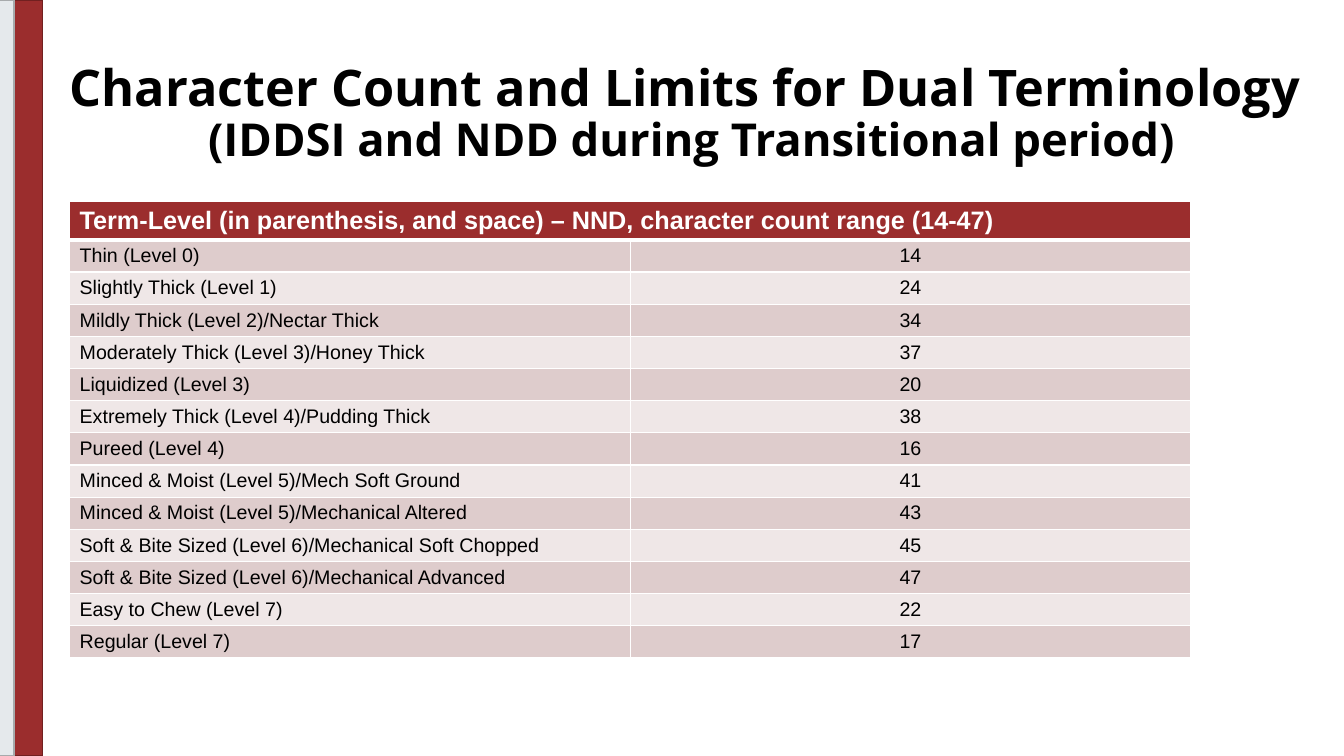
from typing import NamedTuple

from lxml.etree import SubElement
from pptx import Presentation
from pptx.dml.color import RGBColor
from pptx.enum.shapes import MSO_SHAPE
from pptx.enum.text import MSO_ANCHOR, PP_ALIGN
from pptx.oxml import parse_xml
from pptx.oxml.ns import nsdecls, qn
from pptx.util import Inches, Pt

BLACK = RGBColor(0x00, 0x00, 0x00)
WHITE = RGBColor(0xFF, 0xFF, 0xFF)
RED = RGBColor(0x9B, 0x2D, 0x2D)
DARK_RED = RGBColor(0x71, 0x20, 0x20)
PALE_GREY = RGBColor(0xE5, 0xE9, 0xEC)
MID_GREY = RGBColor(0xA7, 0xAA, 0xAC)
ROW_BANDS = (RGBColor(0xDE, 0xCC, 0xCC), RGBColor(0xEF, 0xE7, 0xE7))


class SideBar(NamedTuple):
    left: float
    width: float
    fill: RGBColor
    outline: RGBColor


class Term(NamedTuple):
    name: str
    count: int


SIDE_BARS = [
    SideBar(0, 0.42, RED, DARK_RED),
    SideBar(-0.03, 0.17, PALE_GREY, MID_GREY),
]
TITLE_LINES = (
    "Character Count and Limits for Dual Terminology ",
    "(IDDSI and NDD during Transitional period)",
)
TITLE_SIZES = (36, 32.4)
TABLE_HEADING = "Term-Level (in parenthesis, and space) – NND, character count range (14-47)"
TERMS = [
    Term("Thin (Level 0)", 14),
    Term("Slightly Thick (Level 1)", 24),
    Term("Mildly Thick (Level 2)/Nectar Thick", 34),
    Term("Moderately Thick (Level 3)/Honey Thick", 37),
    Term("Liquidized (Level 3)", 20),
    Term("Extremely Thick (Level 4)/Pudding Thick", 38),
    Term("Pureed (Level 4)", 16),
    Term("Minced & Moist (Level 5)/Mech Soft Ground", 41),
    Term("Minced & Moist (Level 5)/Mechanical Altered", 43),
    Term("Soft & Bite Sized (Level 6)/Mechanical Soft Chopped", 45),
    Term("Soft & Bite Sized (Level 6)/Mechanical Advanced", 47),
    Term("Easy to Chew (Level 7)", 22),
    Term("Regular (Level 7)", 17),
]
HEADING_HEIGHT, TERM_HEIGHT, COLUMN_WIDTH = 0.37, 0.31, 5.56


def draw_side_bar(slide, bar: SideBar) -> None:
    stripe = slide.shapes.add_shape(
        MSO_SHAPE.RECTANGLE, Inches(bar.left), 0, Inches(bar.width), Inches(7.5)
    )
    stripe.shadow.inherit = False
    stripe.fill.solid()
    stripe.fill.fore_color.rgb = bar.fill
    stripe.line.color.rgb = bar.outline
    stripe.line.width = Pt(1)


def write_title(slide) -> None:
    title = slide.shapes.title
    title.left, title.top = Inches(0.38), Inches(0.41)
    title.width, title.height = Inches(12.96), Inches(1.45)
    title.text_frame.vertical_anchor = MSO_ANCHOR.MIDDLE
    heading = title.text_frame.paragraphs[0]
    heading.text = "\v".join(TITLE_LINES)
    heading.alignment = PP_ALIGN.CENTER
    heading.line_spacing = 0.9
    for run, size in zip(heading.runs, TITLE_SIZES):
        run.font.name = "Open Sans"
        run.font.size = Pt(size)
        run.font.bold = True
        run.font.color.rgb = BLACK
    # The line break takes the size of the first line
    line_break = heading._p.find(qn("a:br"))
    SubElement(line_break, qn("a:rPr")).set("sz", str(TITLE_SIZES[0] * 100))


def set_borders(cell, top: float = 1, bottom: float = 1) -> None:
    properties = cell._tc.get_or_add_tcPr()
    widths = {"lnL": 1, "lnR": 1, "lnT": top, "lnB": bottom}
    for position, (side, width) in enumerate(widths.items()):
        border = parse_xml(
            f'<a:{side} {nsdecls("a")} w="{Pt(width)}"><a:solidFill>'
            f'<a:srgbClr val="{WHITE}"/></a:solidFill></a:{side}>'
        )
        properties.insert(position, border)


def fill_cell(cell, text: str, fill: RGBColor, color: RGBColor, size: float,
              bold: bool = False, align: PP_ALIGN = PP_ALIGN.LEFT) -> None:
    cell.fill.solid()
    cell.fill.fore_color.rgb = fill
    cell.text_frame.text = text
    paragraph = cell.text_frame.paragraphs[0]
    paragraph.alignment = align
    for run in paragraph.runs:
        run.font.name = "Arial"
        run.font.size = Pt(size)
        run.font.bold = bold
        run.font.color.rgb = color


def draw_term_table(slide) -> None:
    table_height = HEADING_HEIGHT + TERM_HEIGHT * len(TERMS)
    table = slide.shapes.add_table(
        len(TERMS) + 1, 2, Inches(0.69), Inches(2),
        Inches(2 * COLUMN_WIDTH), Inches(table_height),
    ).table
    for column in table.columns:
        column.width = Inches(COLUMN_WIDTH)
    for row in table.rows:
        row.height = Inches(TERM_HEIGHT)
    table.rows[0].height = Inches(HEADING_HEIGHT)

    # Heading across both columns
    table.cell(0, 0).merge(table.cell(0, 1))
    fill_cell(table.cell(0, 0), TABLE_HEADING, RED, WHITE, 18, bold=True)
    for cell in table.rows[0].cells:
        set_borders(cell, bottom=3)

    # One banded row per term
    for number, term in enumerate(TERMS, start=1):
        name_cell, count_cell = table.rows[number].cells
        band = ROW_BANDS[(number - 1) % 2]
        fill_cell(name_cell, term.name, band, BLACK, 14)
        fill_cell(count_cell, str(term.count), band, BLACK, 14, align=PP_ALIGN.CENTER)
        for cell in (name_cell, count_cell):
            set_borders(cell, top=3 if number == 1 else 1)


def main() -> None:
    deck = Presentation()
    deck.slide_width, deck.slide_height = Inches(13.33), Inches(7.5)
    slide = deck.slides.add_slide(deck.slide_layouts[5])
    for bar in SIDE_BARS:
        draw_side_bar(slide, bar)
    write_title(slide)
    draw_term_table(slide)
    deck.save("out.pptx")


if __name__ == "__main__":
    main()
